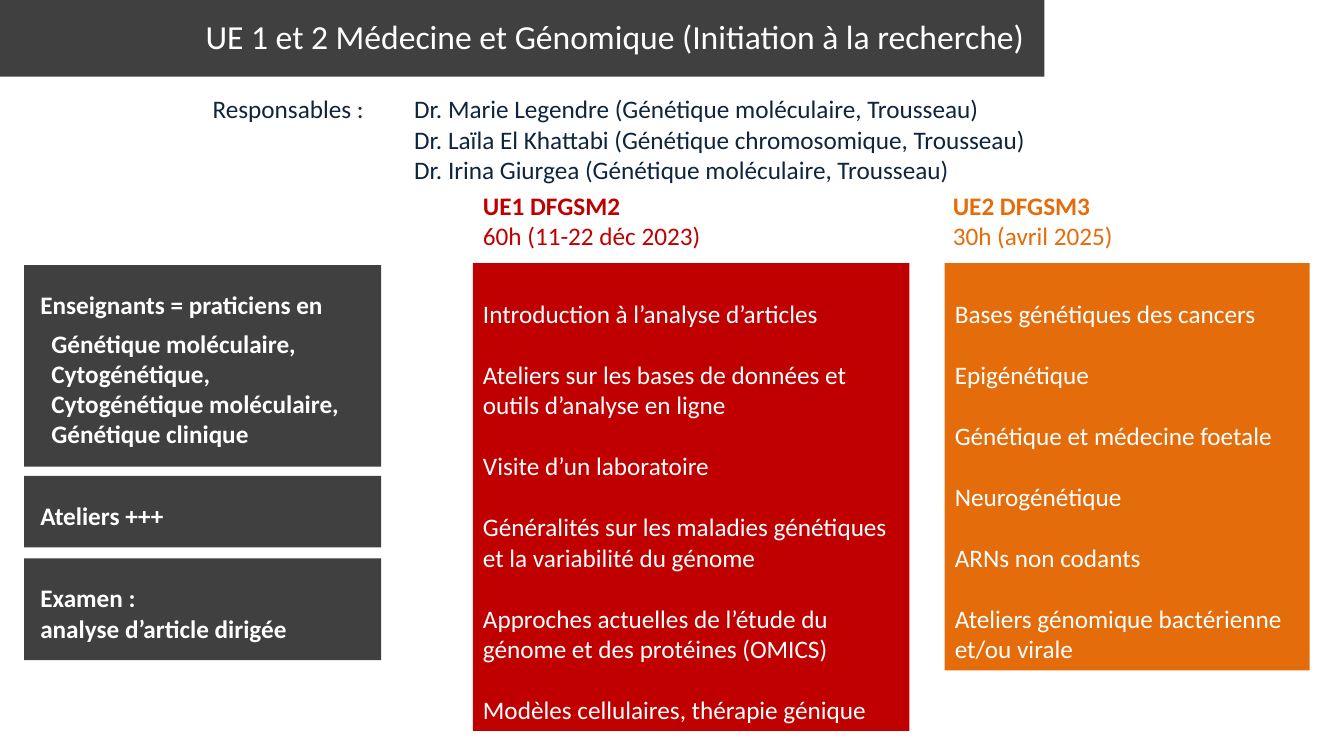
from dataclasses import dataclass

from lxml.etree import SubElement
from pptx import Presentation
from pptx.dml.color import RGBColor
from pptx.enum.shapes import MSO_SHAPE as Shape
from pptx.enum.text import MSO_ANCHOR as Anchor, MSO_AUTO_SIZE as AutoSize, PP_ALIGN as Align
from pptx.oxml.ns import qn
from pptx.util import Inches, Pt


@dataclass(frozen=True)
class Theme:
    font: str = "Calibri"
    title_size: int = 24
    body_size: int = 18
    white: str = "FFFFFF"
    grey: str = "404040"
    navy: str = "0F243E"
    red: str = "C00000"
    orange: str = "E46C0A"


THEME = Theme()


@dataclass(frozen=True)
class Line:
    text: str
    bold: bool = False
    before: float = 0  # points
    indent: float = 0  # inches


@dataclass(frozen=True)
class Block:
    box: tuple[float, float, float, float]  # left, top, width, height
    lines: list[Line]
    color: str = THEME.white
    fill: str | None = None
    insets: tuple[float, float, float, float] = (0.1, 0.05, 0.1, 0.05)
    size: int = THEME.body_size
    align: Align = Align.LEFT
    anchor: Anchor = Anchor.TOP


@dataclass(frozen=True)
class Unit:
    heading: Block
    topics: Block


def set_all(target: object, values: dict[str, object]) -> None:
    for name, value in values.items():
        setattr(target, name, value)


def write_line(paragraph: object, line: Line, block: Block) -> None:
    set_all(paragraph, {"alignment": block.align, "line_spacing": 1.0,
                        "space_before": Pt(line.before), "space_after": Pt(0)})
    properties = paragraph._p.get_or_add_pPr()
    properties.set("marL", str(Inches(line.indent)))
    properties.set("indent", "0")
    SubElement(properties, qn("a:buNone"))
    run = paragraph.add_run()
    run.text = line.text
    set_all(run.font, {"name": THEME.font, "size": Pt(block.size), "bold": line.bold})
    run.font.color.rgb = RGBColor.from_string(block.color)


def format_block(shape: object, block: Block) -> None:
    sides = ("left", "top", "width", "height")
    set_all(shape, {side: Inches(value) for side, value in zip(sides, block.box)})
    if block.fill:
        shape.fill.solid()
        shape.fill.fore_color.rgb = RGBColor.from_string(block.fill)
        shape.line.fill.background()
    frame = shape.text_frame
    margins = ("margin_left", "margin_top", "margin_right", "margin_bottom")
    set_all(frame, {name: Inches(value) for name, value in zip(margins, block.insets)})
    set_all(frame, {"word_wrap": True, "auto_size": AutoSize.NONE,
                    "vertical_anchor": block.anchor})
    for number, line in enumerate(block.lines):
        paragraph = frame.add_paragraph() if number else frame.paragraphs[0]
        write_line(paragraph, line, block)


def make_unit(left: float, topics_left: float, heading_width: float, topics_size: tuple[float, float],
              color: str, name: str, hours: str, topics: list[str]) -> Unit:
    gap = 22  # one line of body text between topics
    return Unit(
        Block((left, 1.84, heading_width, 0.71), [Line(name, bold=True), Line(hours)], color),
        Block((topics_left, 2.61, *topics_size),
              [Line(topic, before=gap if number else 0) for number, topic in enumerate(topics)],
              fill=color, insets=(0.1, 0.35, 0.1, 0.05)))


def make_fact(top: float, height: float, lines: list[Line]) -> Block:
    return Block((0.24, top, 3.54, height), lines, fill=THEME.grey,
                 insets=(0.16, 0.24, 0.16, 0.16))


# Content
TITLE = Block((-0.12, -0.3, 10.48, 1.06),
              [Line("UE 1 et 2 Médecine et Génomique (Initiation à la recherche)")],
              fill=THEME.grey, insets=(0.2, 0.05, 0.2, 0.2), size=THEME.title_size,
              align=Align.RIGHT, anchor=Anchor.BOTTOM)

LEADERS = Block((2.01, 0.88, 9.65, 1.01), [
    Line("Responsables :\tDr. Marie Legendre (Génétique moléculaire, Trousseau)"),
    Line("Dr. Laïla El Khattabi (Génétique chromosomique, Trousseau)", indent=2),
    Line("Dr. Irina Giurgea (Génétique moléculaire, Trousseau)", indent=2),
], THEME.navy)

SPECIALTIES = ["Génétique moléculaire,", "Cytogénétique,",
               "Cytogénétique moléculaire,", "Génétique clinique"]
FACTS = [
    make_fact(2.63, 2.0, [Line("Enseignants = praticiens en", bold=True)] + [
        Line(specialty, bold=True, before=0 if number else 6, indent=0.11)
        for number, specialty in enumerate(SPECIALTIES)]),
    make_fact(4.72, 0.71, [Line("Ateliers +++", bold=True)]),
    make_fact(5.54, 1.01, [Line("Examen :", bold=True),
                           Line("analyse d’article dirigée", bold=True)]),
]

UNITS = [
    make_unit(4.69, 4.69, 2.52, (4.33, 4.64), THEME.red, "UE1 DFGSM2", "60h (11-22 déc 2023)", [
        "Introduction à l’analyse d’articles",
        "Ateliers sur les bases de données et outils d’analyse en ligne",
        "Visite d’un laboratoire",
        "Généralités sur les maladies génétiques et la variabilité du génome",
        "Approches actuelles de l’étude du génome et des protéines (OMICS)",
        "Modèles cellulaires, thérapie génique"]),
    make_unit(9.35, 9.37, 1.8, (3.62, 4.04), THEME.orange, "UE2 DFGSM3", "30h (avril 2025)", [
        "Bases génétiques des cancers",
        "Epigénétique",
        "Génétique et médecine foetale",
        "Neurogénétique",
        "ARNs non codants",
        "Ateliers génomique bactérienne et/ou virale"]),
]


def main() -> None:
    deck = Presentation()
    set_all(deck, {"slide_width": Inches(13.33), "slide_height": Inches(7.5)})
    comparison = deck.slide_layouts.get_by_name("Comparison")
    slide = deck.slides.add_slide(comparison)

    # Title and course leaders
    format_block(slide.shapes.title, TITLE)
    format_block(slide.shapes.add_textbox(0, 0, 0, 0), LEADERS)

    # Teachers, workshops and exam
    for fact in FACTS:
        panel = slide.shapes.add_shape(Shape.RECTANGLE, 0, 0, 0, 0)
        panel.shadow.inherit = False
        format_block(panel, fact)

    # Teaching units: heading and topics from the comparison layout
    _, *columns = slide.placeholders
    for unit, heading, topics in zip(UNITS, columns[::2], columns[1::2]):
        format_block(heading, unit.heading)
        format_block(topics, unit.topics)

    deck.save("out.pptx")


if __name__ == "__main__":
    main()
